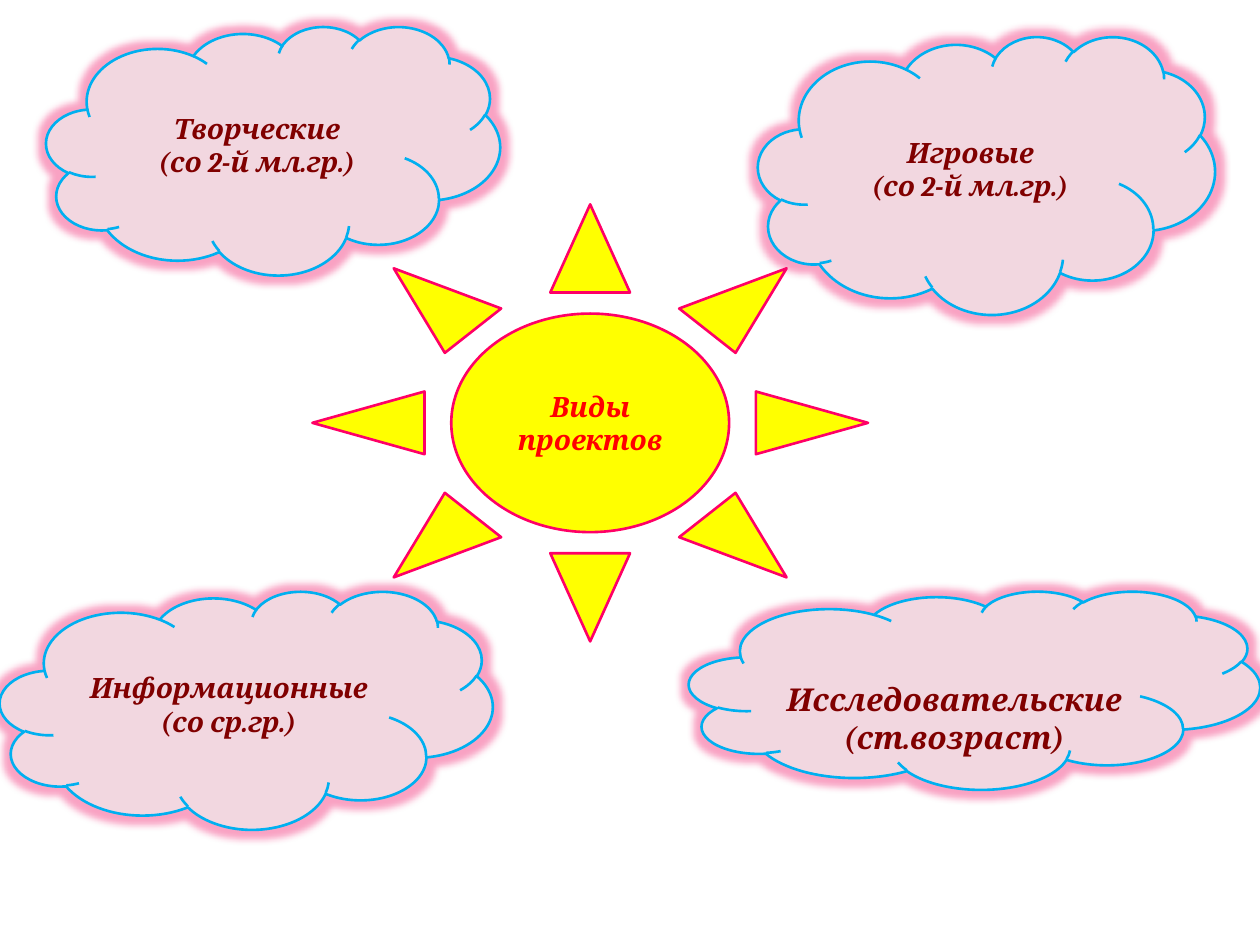
from lxml import etree
from pptx import Presentation
from pptx import util as u
from pptx.dml.color import RGBColor
from pptx.enum import shapes, text
from pptx.oxml.ns import qn

COLORS = {
    "sun": "FFFF00", "sun_edge": "FF0066", "sun_text": "FF0000",
    "cloud": "F2D7E0", "cloud_edge": "00B0F0", "cloud_text": "800000",
    "glow": "F0186A",
}


class ProjectSlide:
    FONT = {"name": "Cambria", "bold": True, "italic": True}
    EDGE = u.Pt(1.5)
    GLOW = {"radius": u.Pt(8), "alpha": 40000}

    def __init__(self, deck):
        self.slide = deck.slides.add_slide(deck.slide_layouts[6])

    def labelled(self, kind, role, box, lines, size):
        figure = self.slide.shapes.add_shape(kind, *map(u.Pt, box))
        figure.shadow.inherit = False
        figure.fill.solid()
        figure.fill.fore_color.rgb = RGBColor.from_string(COLORS[role])
        figure.line.color.rgb = RGBColor.from_string(COLORS[role + "_edge"])
        figure.line.width = self.EDGE
        frame = figure.text_frame
        frame.word_wrap = True
        frame.vertical_anchor = text.MSO_ANCHOR.MIDDLE
        frame.text = "\n".join(lines)
        for line in frame.paragraphs:
            line.alignment = text.PP_ALIGN.CENTER
            for run in line.runs:
                for attribute, value in {**self.FONT, "size": u.Pt(size)}.items():
                    setattr(run.font, attribute, value)
                run.font.color.rgb = RGBColor.from_string(COLORS[role + "_text"])
        return figure

    def sun(self, box, title):
        self.labelled(shapes.MSO_SHAPE.SUN, "sun", box, [title], 16)

    def cloud(self, box, lines, size=16, top_inset=None):
        """Add a glowing cloud; a top inset hangs its text from the top."""
        cloud = self.labelled(shapes.MSO_SHAPE.CLOUD, "cloud", box, lines, size)
        if top_inset is not None:
            cloud.text_frame.vertical_anchor = text.MSO_ANCHOR.TOP
            cloud.text_frame.margin_top = u.Pt(top_inset)
        effects = cloud._element.spPr.find(qn("a:effectLst"))
        glow = etree.SubElement(effects, qn("a:glow"), rad=str(self.GLOW["radius"]))
        color = etree.SubElement(glow, qn("a:srgbClr"), val=COLORS["glow"])
        etree.SubElement(color, qn("a:alpha"), val=str(self.GLOW["alpha"]))


def main():
    deck = Presentation()
    deck.slide_width, deck.slide_height = u.Pt(720), u.Pt(540)
    page = ProjectSlide(deck)
    page.sun((178.5, 116.75, 317.5, 249.75), "Виды проектов")
    page.cloud((26.5, 15, 259.25, 142), ["Творческие", "(со 2-й мл.гр.)"])
    page.cloud((433.25, 20.75, 261, 158.75), ["Игровые", "(со 2-й мл.гр.)"])
    page.cloud((0, 337.75, 281.5, 136), ["Информационные", "(со ср.гр.)"])
    page.cloud((393.75, 337.75, 326.25, 113.25),
               ["Исследовательские", "(ст.возраст)"], size=18, top_inset=34)
    deck.save("out.pptx")


if __name__ == "__main__":
    main()
